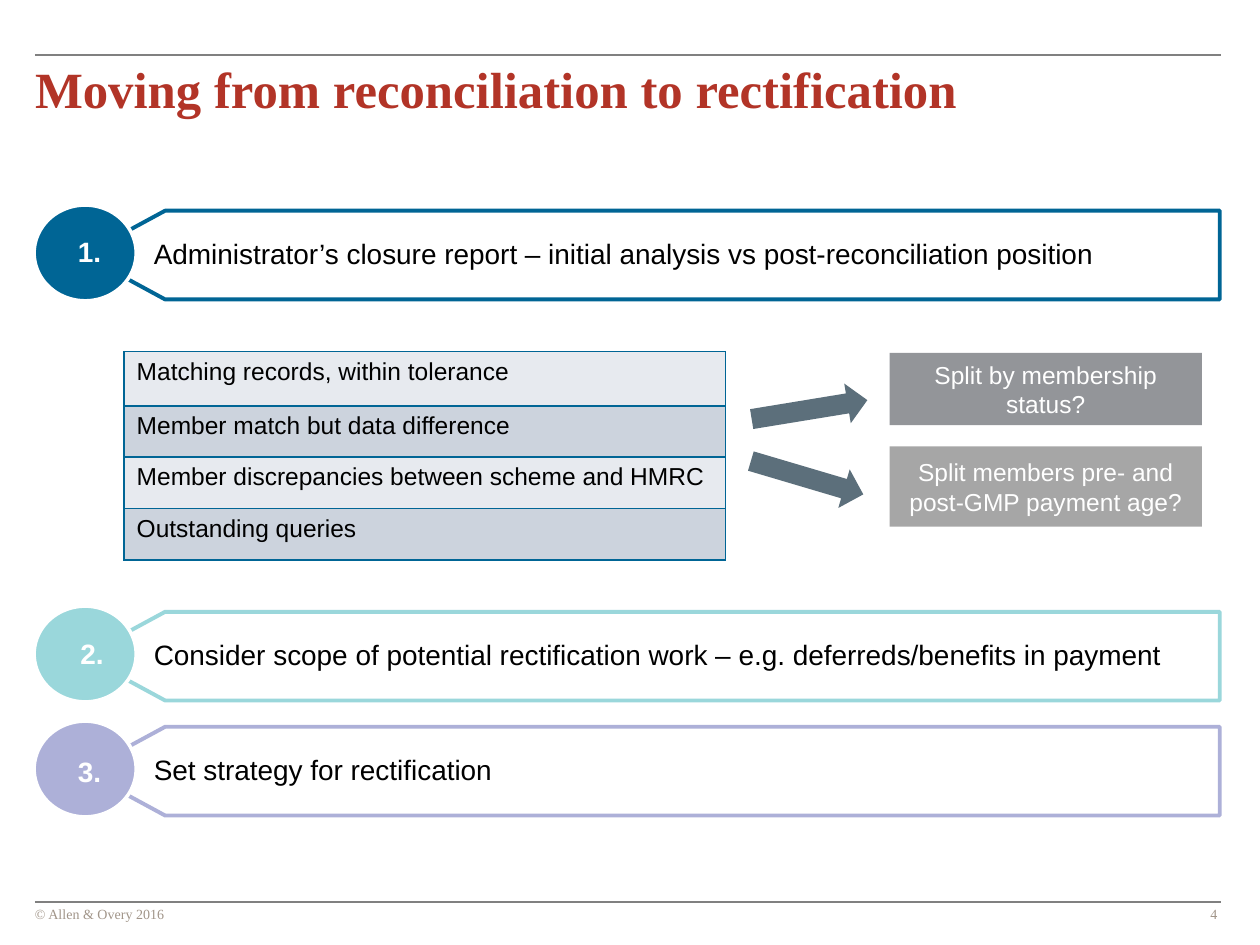
from lxml.etree import SubElement
from pptx import Presentation
from pptx.dml.color import RGBColor
from pptx.enum.shapes import MSO_CONNECTOR, MSO_SHAPE
from pptx.enum.text import MSO_ANCHOR, PP_ALIGN
from pptx.oxml.ns import qn
from pptx.util import Pt

HUES = {
    "rule": "808080", "foot": "A19589", "title": "B23427",
    "blue": "006595", "teal": "9AD7DB", "lilac": "ADB0D8",
    "pale": "E7EAEF", "band": "CCD3DD", "arrow": "5C6F7B",
    "gray": "939599", "ash": "A6A6A6", "white": "FFFFFF", "black": "000000",
}


def tint(name):
    return RGBColor.from_string(HUES[name])


def paint(shape, fill, line=None, width=1):
    shape.shadow.inherit = False
    shape.fill.solid()
    shape.fill.fore_color.rgb = tint(fill)
    if line:
        shape.line.color.rgb = tint(line)
        shape.line.width = Pt(width)
    else:
        shape.line.fill.background()


def write(frame, text, size, hue, font="Arial", bold=False, align=PP_ALIGN.LEFT):
    frame.word_wrap = True
    para = frame.paragraphs[0]
    para.alignment = align
    run = para.add_run()
    run.text = text
    run.font.size = Pt(size)
    run.font.name = font
    run.font.bold = bold
    run.font.color.rgb = tint(hue)
    return para


def inset(frame, left=0, top=0, right=0, bottom=0):
    frame.margin_left, frame.margin_top = Pt(left), Pt(top)
    frame.margin_right, frame.margin_bottom = Pt(right), Pt(bottom)


def label(slide, x, y, w, h, text, size, hue, **style):
    frame = slide.shapes.add_textbox(Pt(x), Pt(y), Pt(w), Pt(h)).text_frame
    inset(frame)
    write(frame, text, size, hue, **style)


def rule(slide, x, y, w):
    line = slide.shapes.add_connector(
        MSO_CONNECTOR.STRAIGHT, Pt(x), Pt(y), Pt(x + w), Pt(y))
    line.line.color.rgb = tint("rule")
    line.line.width = Pt(1)
    SubElement(line._element.spPr, qn("a:effectLst"))


def header(slide, x, y, w):
    rule(slide, x, y, w)
    label(slide, x, y + 1.6, w, 35.3, "Moving from reconciliation to rectification",
          29, "title", font="Times New Roman", bold=True)


def footer(slide, x, y, w):
    rule(slide, x, y, w)
    for text, align in (("© Allen & Overy 2016", PP_ALIGN.LEFT), ("4", PP_ALIGN.RIGHT)):
        label(slide, x, y + 2.2, w - 2.2, 9.4, text, 8, "foot",
              font="Times New Roman", align=align)


def step(slide, x, y, w, text, num, hue, dx, dy):
    left, top, right, high, notch = x + 28.1, y + 3.2, x + w, 50.7, 46.8
    points = [(right, top + high), (left + notch, top + high), (left, top + high / 2),
              (left + notch, top), (right, top)]
    spots = [(Pt(a), Pt(b)) for a, b in points]
    pen = slide.shapes.build_freeform(*spots[0], scale=1.0)
    pen.add_line_segments(spots[1:], close=True)
    bar = pen.convert_to_shape()
    paint(bar, "white", hue, 2.25)
    frame = bar.text_frame
    inset(frame, 40.3, 5, 8.6, 5)
    frame.vertical_anchor = MSO_ANCHOR.MIDDLE
    write(frame, text, 16, "black").line_spacing = 0.9
    disc = slide.shapes.add_shape(MSO_SHAPE.OVAL, Pt(x), Pt(y), Pt(58.3), Pt(54.7))
    paint(disc, hue, "white", 2)
    label(slide, x + dx, y + dy, 40.3, 19.4, num, 16, "white",
          bold=True, align=PP_ALIGN.CENTER)


def edge(cell, hue):
    props = cell._tc.get_or_add_tcPr()
    for at, side in enumerate(("lnL", "lnR", "lnT", "lnB")):
        line = props.makeelement(qn("a:" + side), {"w": str(Pt(1))})
        fill = SubElement(line, qn("a:solidFill"))
        SubElement(fill, qn("a:srgbClr"), val=HUES[hue])
        props.insert(at, line)


def records(slide, x, y, w):
    rows = ["Matching records, within tolerance", "Member match but data difference",
            "Member discrepancies between scheme and HMRC", "Outstanding queries"]
    highs = [31, 29.4, 29.4, 29.4]
    table = slide.shapes.add_table(
        len(rows), 1, Pt(x), Pt(y), Pt(w), Pt(sum(highs))).table
    for i, (text, high) in enumerate(zip(rows, highs)):
        table.rows[i].height = Pt(high)
        cell = table.cell(i, 0)
        cell.fill.solid()
        cell.fill.fore_color.rgb = tint("band" if i % 2 else "pale")
        edge(cell, "blue")
        write(cell.text_frame, text, 14, "black")


def splits(slide, x, y):
    for dx, dy, turn in ((1.4, 20.9, 350.7), (0, 59.8, 16.5)):
        arrow = slide.shapes.add_shape(
            MSO_SHAPE.RIGHT_ARROW, Pt(x + dx), Pt(y + dy), Pt(67), Pt(23))
        arrow.rotation = turn
        paint(arrow, "arrow")
    for dy, high, hue, text in (
            (0, 41.3, "gray", "Split by membership status?"),
            (53.3, 46, "ash", "Split members pre- and post-GMP payment age?")):
        box = slide.shapes.add_shape(
            MSO_SHAPE.RECTANGLE, Pt(x + 80.7), Pt(y + dy), Pt(178.4), Pt(high))
        paint(box, hue)
        box.text_frame.vertical_anchor = MSO_ANCHOR.MIDDLE
        write(box.text_frame, text, 14, "white", align=PP_ALIGN.CENTER)


def main():
    deck = Presentation()
    deck.slide_width, deck.slide_height = Pt(720), Pt(540)
    slide = deck.slides.add_slide(deck.slide_layouts[6])
    header(slide, 20, 31.5, 677.8)
    footer(slide, 20, 515.5, 677.8)
    records(slide, 70.9, 200.9, 343.6)
    splits(slide, 427.7, 201.7)
    steps = [
        (117.2, "Administrator’s closure report – initial analysis vs "
                "post-reconciliation position", "blue", 11.5, 16.7),
        (346.4, "Consider scope of potential rectification work – e.g. "
                "deferreds/benefits in payment", "teal", 13, 17.2),
        (412.1, "Set strategy for rectification", "lilac", 11.5, 19.2),
    ]
    for i, (y, text, hue, dx, dy) in enumerate(steps, 1):
        step(slide, 19.5, y, 677.5, text, f"{i}.", hue, dx, dy)
    deck.save("out.pptx")


if __name__ == "__main__":
    main()
